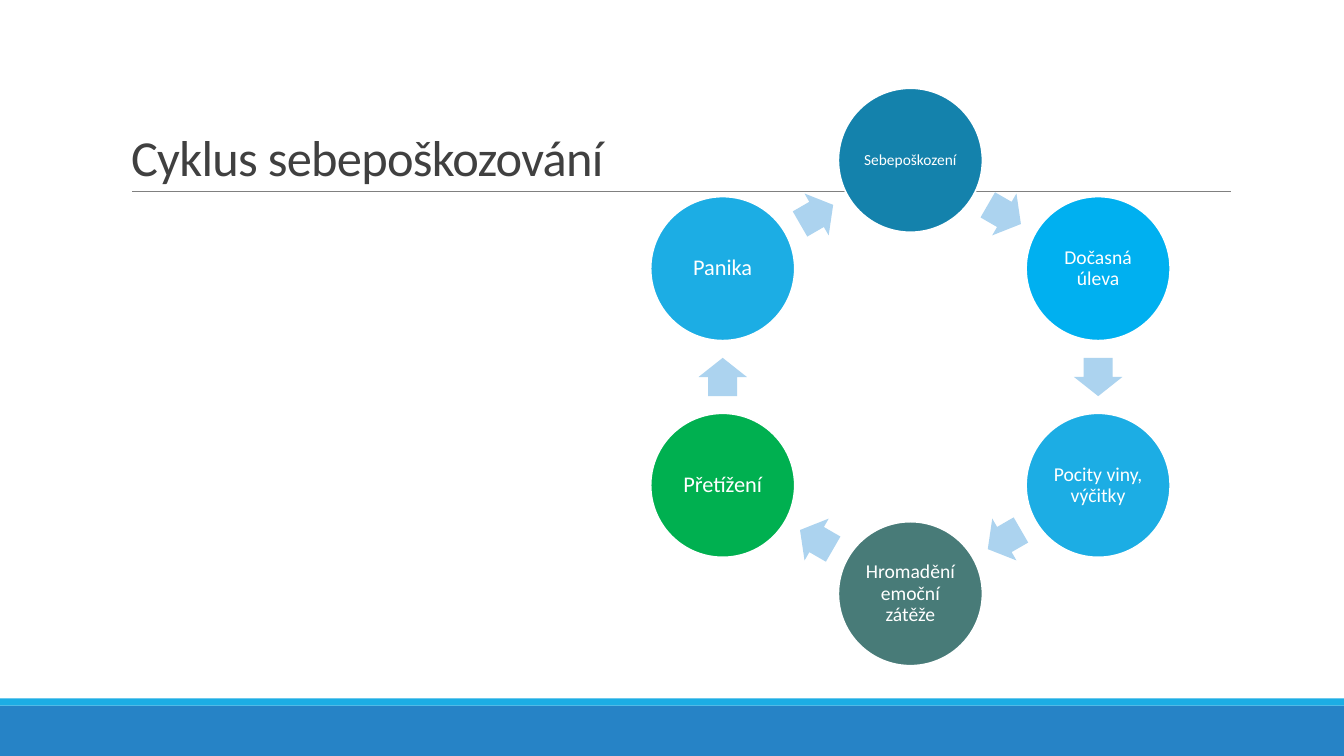
from math import cos, radians, sin

from lxml import etree
from pptx import Presentation
from pptx.dml.color import RGBColor
from pptx.enum.shapes import MSO_CONNECTOR, MSO_SHAPE
from pptx.enum.text import MSO_ANCHOR, PP_ALIGN
from pptx.oxml.ns import qn
from pptx.util import Inches, Pt

RECTANGLE, OVAL, RIGHT_ARROW = MSO_SHAPE.RECTANGLE, MSO_SHAPE.OVAL, MSO_SHAPE.RIGHT_ARROW
STRAIGHT = MSO_CONNECTOR.STRAIGHT
MIDDLE, BOTTOM = MSO_ANCHOR.MIDDLE, MSO_ANCHOR.BOTTOM
LEFT, CENTER = PP_ALIGN.LEFT, PP_ALIGN.CENTER

# Content: stages clockwise from the top (text, fill, text size)
TITLE = "Cyklus sebepoškozování"
STAGES = [
    ("Sebepoškození", "1482AC", 11),
    ("Dočasná úleva", "00B0F0", 14),
    ("Pocity viny, výčitky", "1CADE4", 14),
    ("Hromadění emoční zátěže", "487B78", 14),
    ("Přetížení", "00B050", 16),
    ("Panika", "1CADE4", 16),
]
BANDS = [(7, 0.5, "2683C6"), (6.93, 0.07, "1CADE4")]  # top, height, fill

# Geometry in inches
SLIDE_WIDTH, SLIDE_HEIGHT = 13.33, 7.5
CENTER_X, CENTER_Y, RADIUS = 9.03, 3.74, 2.15
STAGE_SIZE = 1.43
ARROW_WIDTH, ARROW_HEIGHT = 0.38, 0.48
STEP = 360 / len(STAGES)
ARROW_RADIUS = RADIUS * cos(radians(STEP / 2))


def color(value):
    return RGBColor.from_string(value)


def add_filled(kind, left, top, width, height, fill):
    shape = slide.shapes.add_shape(
        kind, Inches(left), Inches(top), Inches(width), Inches(height))
    shape.shadow.inherit = False
    shape.fill.solid()
    shape.fill.fore_color.rgb = color(fill)
    shape.line.fill.background()
    return shape


def add_on_ring(kind, angle, radius, width, height, fill):
    """Centre a shape on the ring; angle runs clockwise from the top."""
    x = CENTER_X + radius * sin(radians(angle))
    y = CENTER_Y - radius * cos(radians(angle))
    return add_filled(kind, x - width / 2, y - height / 2, width, height, fill)


def set_text(frame, text, size, text_color, align, anchor, spacing):
    frame.text = text
    frame.word_wrap = True
    frame.vertical_anchor = anchor
    paragraph = frame.paragraphs[0]
    paragraph.alignment = align
    paragraph.line_spacing = spacing
    font = paragraph.runs[0].font
    font.name, font.size = "Calibri", Pt(size)
    font.color.rgb = color(text_color)
    return font


prs = Presentation()
prs.slide_width, prs.slide_height = Inches(SLIDE_WIDTH), Inches(SLIDE_HEIGHT)
slide = prs.slides.add_slide(prs.slide_layouts[5])

# Bottom bands
for top, height, fill in BANDS:
    add_filled(RECTANGLE, 0, top, SLIDE_WIDTH, height, fill)

# Title and the rule under it
title = slide.shapes.title
title.left, title.top = Inches(1.2), Inches(0.31)
title.width, title.height = Inches(11), Inches(1.59)
title_font = set_text(title.text_frame, TITLE, 36, "404040", LEFT, BOTTOM, 0.85)
title_font._element.set("spc", "-50")

title_rule = slide.shapes.add_connector(
    STRAIGHT, Inches(1.31), Inches(1.9), Inches(12.21), Inches(1.9))
title_rule.line.color.rgb = color("808080")
title_rule.line.width = Pt(0.5)
etree.SubElement(title_rule._element.spPr, qn("a:effectLst"))

# Cycle: each stage is followed by an arrow to the next one
for index, (text, fill, size) in enumerate(STAGES):
    angle = index * STEP
    stage = add_on_ring(OVAL, angle, RADIUS, STAGE_SIZE, STAGE_SIZE, fill)
    stage.line.color.rgb = color("FFFFFF")
    stage.line.width = Pt(1.25)
    frame = stage.text_frame
    frame.margin_left = frame.margin_right = Inches(0.02)
    frame.margin_top = frame.margin_bottom = Inches(0.02)
    set_text(frame, text, size, "FFFFFF", CENTER, MIDDLE, 0.9)

    arrow_angle = angle + STEP / 2
    arrow = add_on_ring(
        RIGHT_ARROW, arrow_angle, ARROW_RADIUS, ARROW_WIDTH, ARROW_HEIGHT, "ACD3EF")
    arrow.rotation = arrow_angle
    arrow.adjustments[0], arrow.adjustments[1] = 0.6, 0.5

prs.save("out.pptx")
